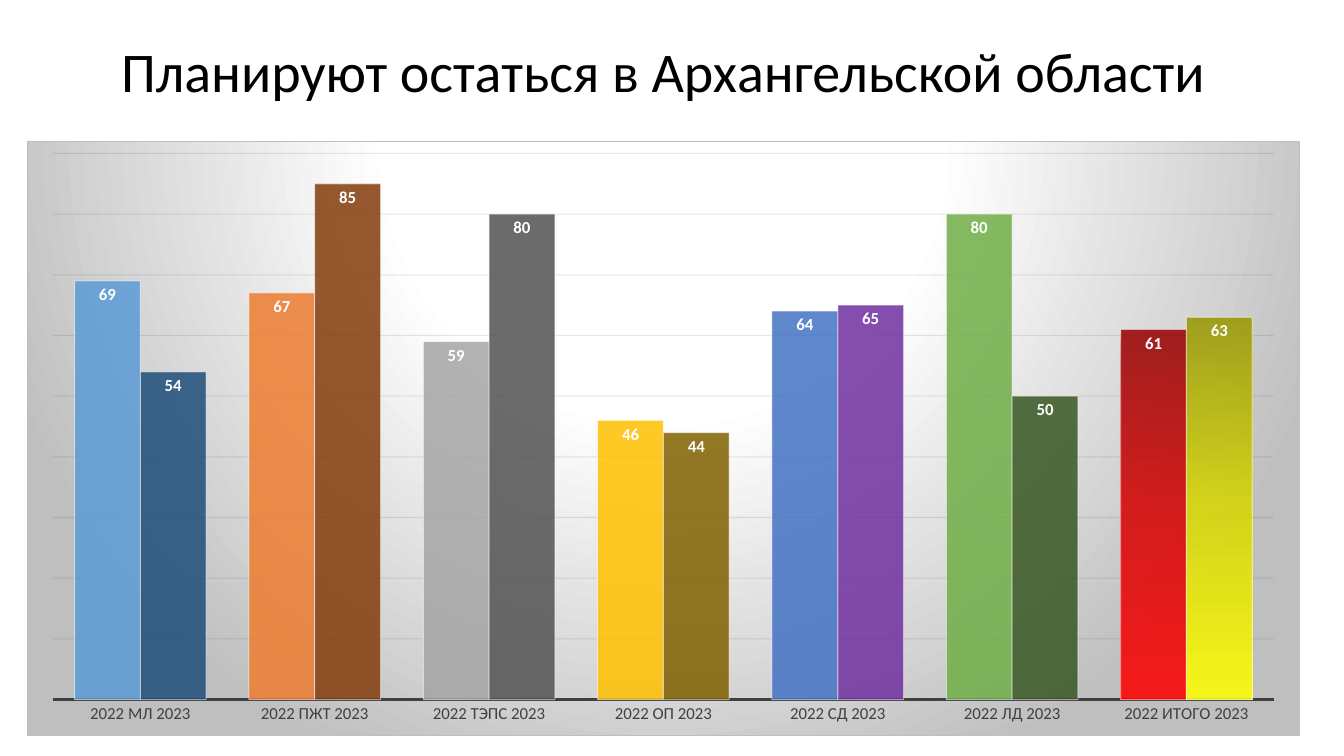
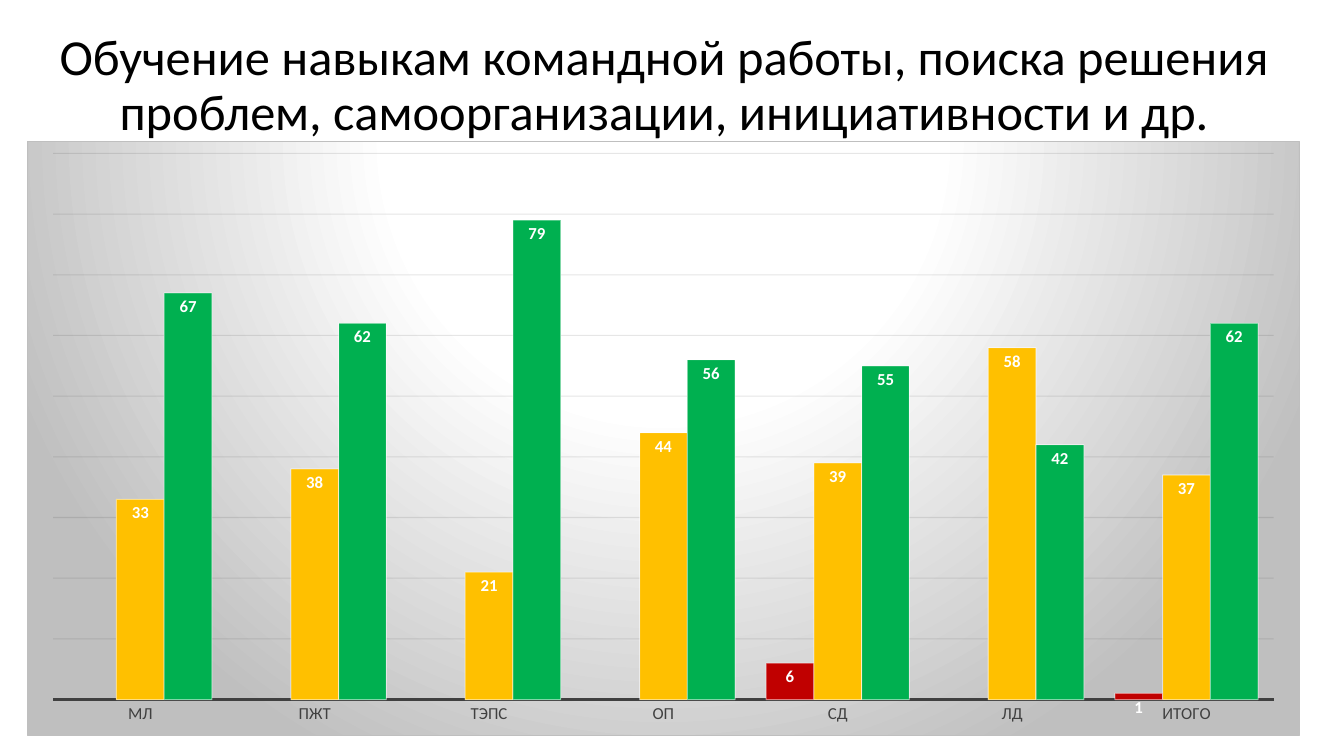
from pptx import Presentation
from pptx.chart.data import CategoryChartData
from pptx.dml.color import RGBColor
from pptx.enum.chart import XL_CHART_TYPE, XL_LABEL_POSITION, XL_TICK_MARK
from pptx.enum.text import MSO_ANCHOR, MSO_AUTO_SIZE, PP_ALIGN
from pptx.oxml import parse_xml
from pptx.oxml.ns import nsdecls, qn
from pptx.util import Pt

COLUMNS = XL_CHART_TYPE.COLUMN_CLUSTERED
INSIDE_END = XL_LABEL_POSITION.INSIDE_END
NO_TICK = XL_TICK_MARK.NONE
CENTER = PP_ALIGN.CENTER
TOP, BOTTOM = MSO_ANCHOR.TOP, MSO_ANCHOR.BOTTOM
NO_AUTOFIT = MSO_AUTO_SIZE.NONE

EMU_PER_PX = 9144
TITLE_ONLY = 5
FONT = "Calibri"
COLORS = {
    "black": "000000", "white": "FFFFFF", "axis": "404040", "grid": "0D0D0D",
    "silver": "BFBFBF", "low": "C00000", "middle": "FFC000", "high": "00B050",
    "blue": "5B9BD5", "navy": "1F4E79", "orange": "ED7D31", "brown": "843C0B",
    "gray": "A5A5A5", "dark gray": "525252", "gold": "FFC000", "olive": "806000",
    "indigo": "4472C4", "purple": "7030A0", "green": "70AD47", "forest": "385723",
}
GRADIENTS = {
    "red fade": [(0, "970000"), (50, "D70000"), (100, "FF0000")],
    "yellow fade": [(0, "979700"), (50, "D7D700"), (100, "FFFF00")],
    "chart area": [(0, "FFFFFF"), (39, "FFFFFF"), (100, "BFBFBF")],
}
DOWNWARD = '<a:lin ang="5400000" scaled="0"/>'
RADIAL = ('<a:path path="circle"><a:fillToRect l="50000" t="-80000" '
          'r="50000" b="180000"/></a:path>')


def px(n):
    return n * EMU_PER_PX


def rgb(name):
    return RGBColor.from_string(COLORS[name])


def gradient_xml(name, shading, alpha=100):
    stops = "".join(
        f'<a:gs pos="{pos * 1000}"><a:srgbClr val="{color}">'
        f'<a:alpha val="{alpha * 1000}"/></a:srgbClr></a:gs>'
        for pos, color in GRADIENTS[name])
    return (f'<a:gradFill {nsdecls("a")} rotWithShape="1">'
            f'<a:gsLst>{stops}</a:gsLst>{shading}</a:gradFill>')


def set_alpha(parent, alpha):
    for color in parent.iter(qn("a:srgbClr")):
        color.append(parse_xml(f'<a:alpha {nsdecls("a")} val="{alpha * 1000}"/>'))


class Deck:
    """Holds the shared style and the current slide."""

    def __init__(self):
        self.prs = Presentation()
        self.prs.slide_width, self.prs.slide_height = px(1333), px(750)
        self.s = None

    def slide(self):
        self.s = self.prs.slides.add_slide(self.prs.slide_layouts[TITLE_ONLY])

    def font(self, font, size, color, bold=False):
        font.name, font.size, font.bold = FONT, Pt(size), bold
        font.color.rgb = rgb(color)

    def title(self, text, box, size, anchor):
        sp = self.s.shapes.title
        sp.left, sp.top, sp.width, sp.height = map(px, box)
        tf = sp.text_frame
        tf.text = text
        tf.word_wrap, tf.auto_size, tf.vertical_anchor = True, NO_AUTOFIT, anchor
        p = tf.paragraphs[0]
        p.alignment, p.line_spacing = CENTER, 0.9
        self.font(p.runs[0].font, size, "black")

    def line(self, fmt, color, width, alpha=100):
        fmt.line.color.rgb = rgb(color)
        fmt.line.width = Pt(width)
        set_alpha(fmt.line._get_or_add_ln(), alpha)

    def bar(self, fmt, fill, alpha):
        fmt.fill.background()
        if fill in GRADIENTS:
            pr = fmt._element.find(qn("c:spPr"))
            pr.replace(pr.find(qn("a:noFill")),
                       parse_xml(gradient_xml(fill, DOWNWARD, alpha)))
        else:
            fmt.fill.solid()
            fmt.fill.fore_color.rgb = rgb(fill)
            set_alpha(fmt._element.find(qn("c:spPr")), alpha)
        self.line(fmt, "white", 0.75, 50)

    def chart_area(self, chart):
        chart.element.find(qn("c:chart")).addnext(parse_xml(
            f'<c:spPr {nsdecls("c", "a")}>{gradient_xml("chart area", RADIAL)}'
            f'<a:ln w="9525"><a:solidFill><a:srgbClr val="{COLORS["silver"]}"/>'
            '</a:solidFill></a:ln></c:spPr>'))

    def axes(self, chart):
        cat, val = chart.category_axis, chart.value_axis
        cat.major_tick_mark = cat.minor_tick_mark = NO_TICK
        self.font(cat.tick_labels.font, 12, "axis")
        self.line(cat.format, "axis", 1.5)
        val.visible = False
        val.minimum_scale, val.maximum_scale, val.major_unit = 0, 90, 10
        val.has_major_gridlines = True
        self.line(val.major_gridlines.format, "grid", 0.75, 10)

    def chart(self, categories, series, alpha=100):
        """Each series is (values, fills); one fill colours the whole series."""
        data = CategoryChartData()
        data.categories = categories
        for i, (values, _) in enumerate(series, 1):
            data.add_series(f"Series {i}", values)
        chart = self.s.shapes.add_chart(
            COLUMNS, *map(px, (27, 140, 1262, 590)), data).chart
        chart.has_legend = chart.has_title = False
        self.font(chart.font, 10, "black")
        self.chart_area(chart)
        self.axes(chart)
        plot = chart.plots[0]
        plot.gap_width, plot.overlap, plot.vary_by_categories = 65, 0, False
        for ser, (_, fills) in zip(plot.series, series):
            ser.invert_if_negative = False
            self.bar(ser.format, fills[0], alpha)
            for i, fill in enumerate(fills[1:], 1):
                self.bar(ser.points[i].format, fill, alpha)
            labels = ser.data_labels
            labels.show_value, labels.position = True, INSIDE_END
            self.font(labels.font, 12, "white", bold=True)


def main():
    deck = Deck()
    groups = ["МЛ", "ПЖТ", "ТЭПС", "ОП", "СД", "ЛД", "ИТОГО"]

    # Plans to stay: two years per group
    deck.slide()
    deck.title("Планируют остаться в Архангельской области",
               (30, 31, 1255, 78), 40, BOTTOM)
    deck.chart([f"2022 {group} 2023" for group in groups], [
        ([69, 67, 59, 46, 64, 80, 61],
         ["blue", "orange", "gray", "gold", "indigo", "green", "red fade"]),
        ([54, 85, 80, 44, 65, 50, 63],
         ["navy", "brown", "dark gray", "olive", "purple", "forest", "yellow fade"]),
    ], alpha=85)

    # Skills training: three ratings per group
    deck.slide()
    deck.title("Обучение навыкам командной работы, поиска решения проблем, "
               "самоорганизации, инициативности и др.",
               (30, 27, 1258, 108), 36, TOP)
    deck.chart(groups, [
        ([None, None, None, None, 6, None, 1], ["low"]),
        ([33, 38, 21, 44, 39, 58, 37], ["middle"]),
        ([67, 62, 79, 56, 55, 42, 62], ["high"]),
    ])

    deck.prs.save("out.pptx")


if __name__ == "__main__":
    main()
